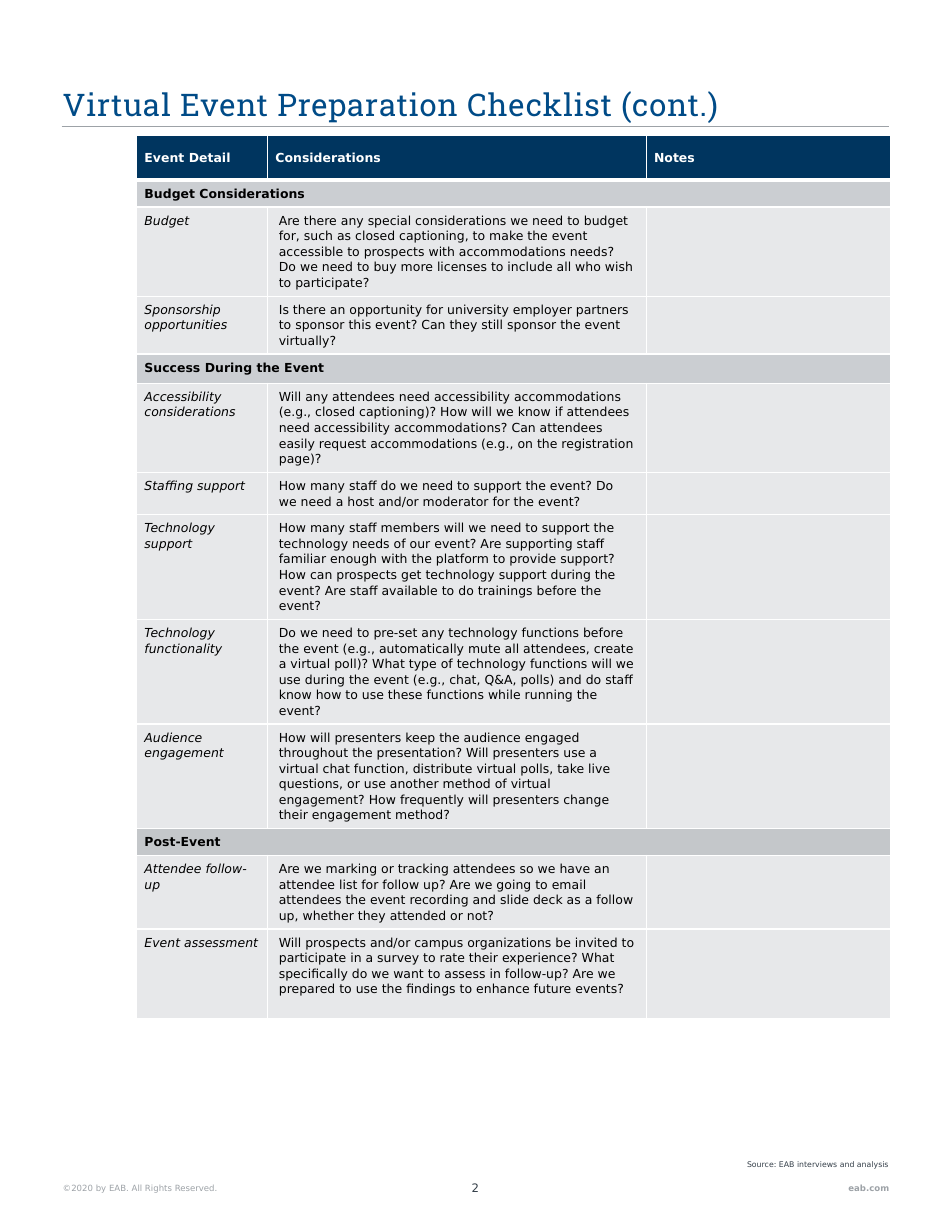
import pptx
import pptx.util
import pptx.oxml
import pptx.oxml.ns
from pptx.dml.color import RGBColor
from pptx.enum.shapes import MSO_CONNECTOR
from pptx.enum.text import MSO_ANCHOR, PP_ALIGN

Inches, Pt = pptx.util.Inches, pptx.util.Pt

# Colours and fonts
BLUE = RGBColor(0x00, 0x4B, 0x87)
NAVY = RGBColor(0x00, 0x35, 0x5F)
SECTION_GRAY = RGBColor(0xCB, 0xCE, 0xD2)
LAST_SECTION_GRAY = RGBColor(0xC4, 0xC7, 0xCA)
ROW_GRAY = RGBColor(0xE7, 0xE8, 0xEA)
RULE_GRAY = RGBColor(0x9D, 0xA2, 0xA7)
DARK = RGBColor(0x33, 0x3E, 0x48)
WHITE = RGBColor(0xFF, 0xFF, 0xFF)
BLACK = RGBColor(0, 0, 0)
BODY_FONT, TITLE_FONT = "DejaVu Sans", "Roboto Slab"

# Content
TITLE = "Virtual Event Preparation Checklist (cont.)"
HEADER = ("Event Detail", "Considerations", "Notes")
# Section name, fill, height, then its items: detail, considerations, height
SECTIONS = [
    ("Budget Considerations", SECTION_GRAY, 0.23, [
        ("Budget", "Are there any special considerations we need to budget for, such as closed "
         "captioning, to make the event accessible to prospects with accommodations needs? "
         "Do we need to buy more licenses to include all who wish to participate?", 0.58),
        ("Sponsorship opportunities", "Is there an opportunity for university employer partners "
         "to sponsor this event? Can they still sponsor the event virtually?", 0.47),
    ]),
    ("Success During the Event", SECTION_GRAY, 0.26, [
        ("Accessibility considerations", "Will any attendees need accessibility accommodations "
         "(e.g., closed captioning)? How will we know if attendees need accessibility "
         "accommodations? Can attendees easily request accommodations (e.g., on the "
         "registration page)?", 0.65),
        ("Staffing support", "How many staff do we need to support the event? Do we need a host "
         "and/or moderator for the event?", 0.3),
        ("Technology support", "How many staff members will we need to support the technology "
         "needs of our event? Are supporting staff familiar enough with the platform to provide "
         "support? How can prospects get technology support during the event? Are staff "
         "available to do trainings before the event?", 0.8),
        ("Technology functionality", "Do we need to pre-set any technology functions before the "
         "event (e.g., automatically mute all attendees, create a virtual poll)? What type of "
         "technology functions will we use during the event (e.g., chat, Q&A, polls) and do "
         "staff know how to use these functions while running the event?", 0.8),
        ("Audience engagement", "How will presenters keep the audience engaged throughout the "
         "presentation? Will presenters use a virtual chat function, distribute virtual polls, "
         "take live questions, or use another method of virtual engagement? How frequently will "
         "presenters change their engagement method?", 0.8),
    ]),
    ("Post-Event", LAST_SECTION_GRAY, 0.18, [
        ("Attendee follow-up", "Are we marking or tracking attendees so we have an attendee list "
         "for follow up? Are we going to email attendees the event recording and slide deck as a "
         "follow up, whether they attended or not?", 0.57),
        ("Event assessment", "Will prospects and/or campus organizations be invited to "
         "participate in a survey to rate their experience? What specifically do we want to "
         "assess in follow-up? Are we prepared to use the findings to enhance future events?", 0.8),
    ]),
]
# Text, position, size, colour, bold, alignment, anchor
FOOTERS = [
    ("Source: EAB interviews and analysis", (6.67, 10.36, 1.7, 0.08), 5, DARK, False,
     PP_ALIGN.LEFT, MSO_ANCHOR.BOTTOM),
    ("©2020 by EAB. All Rights Reserved.", (0.56, 10.56, 2.39, 0.09), 5.5, RULE_GRAY, False,
     PP_ALIGN.LEFT, MSO_ANCHOR.TOP),
    ("2", (4.02, 10.54, 0.45, 0.13), 7.5, DARK, False, PP_ALIGN.CENTER, MSO_ANCHOR.TOP),
    ("eab.com", (7.49, 10.51, 0.45, 0.19), 5.5, RULE_GRAY, True,
     PP_ALIGN.RIGHT, MSO_ANCHOR.MIDDLE),
]
COLUMN_WIDTHS = (1.17, 3.38, 2.18)
HEADER_HEIGHT = 0.4
TABLE_LEFT, TABLE_TOP = 1.22, 1.21


def set_font(para, name, size, color, bold=False, italic=False):
    font = para.font
    font.name, font.size, font.bold, font.italic = name, Pt(size), bold, italic
    font.color.rgb = color


def prepare_frame(frame, anchor):
    frame.margin_left = frame.margin_right = frame.margin_top = frame.margin_bottom = 0
    frame.word_wrap = True
    frame.vertical_anchor = anchor


def set_borders(cell, top=1, bottom=1):
    properties = cell._tc.get_or_add_tcPr()
    for side, width in (("L", 1), ("R", 1), ("T", top), ("B", bottom)):
        properties.append(pptx.oxml.parse_xml(
            f'<a:ln{side} {pptx.oxml.ns.nsdecls("a")} w="{Pt(width)}"><a:solidFill>'
            f'<a:srgbClr val="{WHITE}"/></a:solidFill></a:ln{side}>'))


def fill_cell(cell, text, fill, color=BLACK, bold=False, italic=False, inset=0.07,
              anchor=MSO_ANCHOR.TOP, top=1, bottom=1):
    set_borders(cell, top, bottom)
    cell.fill.solid()
    cell.fill.fore_color.rgb = fill
    cell.margin_left = cell.margin_right = Inches(inset)
    cell.margin_top = cell.margin_bottom = Inches(0.05)
    cell.vertical_anchor = anchor
    para = cell.text_frame.paragraphs[0]
    if text:
        para.text = text
    para.line_spacing = 1.07
    para.space_after = Pt(8)
    set_font(para, BODY_FONT, 8, color, bold, italic)
    if not text:  # keeps an empty cell from stretching its row
        para._p.append(pptx.oxml.parse_xml(
            f'<a:endParaRPr {pptx.oxml.ns.nsdecls("a")} sz="800"/>'))


deck = pptx.Presentation()
deck.slide_width, deck.slide_height = Inches(8.5), Inches(11)
page = deck.slides.add_slide(deck.slide_layouts[5])

# Title
title = page.shapes.title
title.left, title.top, title.width, title.height = map(Inches, (0.56, 0.8, 7.39, 0.3))
prepare_frame(title.text_frame, MSO_ANCHOR.BOTTOM)
para = title.text_frame.paragraphs[0]
para.text = TITLE
para.alignment = PP_ALIGN.LEFT
para.line_spacing = 0.9
set_font(para, TITLE_FONT, 20, BLUE)
para.runs[0].font._element.set("spc", "50")

# Rule below the title
rule = page.shapes.add_connector(MSO_CONNECTOR.STRAIGHT, Inches(0.55), Inches(1.13),
                                 Inches(7.94), Inches(1.13))
rule.line.color.rgb = RULE_GRAY
rule.line.width = Pt(1)
rule._element.spPr.append(pptx.oxml.parse_xml(
    f'<a:effectLst {pptx.oxml.ns.nsdecls("a")}/>'))

# Checklist table
heights = [HEADER_HEIGHT]
for _, _, section_height, items in SECTIONS:
    heights += [section_height] + [height for _, _, height in items]
table = page.shapes.add_table(
    len(heights), len(COLUMN_WIDTHS), Inches(TABLE_LEFT), Inches(TABLE_TOP),
    Inches(sum(COLUMN_WIDTHS)), Inches(sum(heights))).table
table.horz_banding = False
for column, width in zip(table.columns, COLUMN_WIDTHS):
    column.width = Inches(width)
for row, height in zip(table.rows, heights):
    row.height = Inches(height)

for column, label in enumerate(HEADER):
    fill_cell(table.cell(0, column), label, NAVY, WHITE, bold=True,
              anchor=MSO_ANCHOR.MIDDLE, bottom=3)
row = 1
for name, fill, _, items in SECTIONS:
    table.cell(row, 0).merge(table.cell(row, len(COLUMN_WIDTHS) - 1))
    for column in range(len(COLUMN_WIDTHS)):
        fill_cell(table.cell(row, column), "" if column else name, fill, bold=True,
                  top=3 if row == 1 else 1)
    for row, (detail, considerations, _) in enumerate(items, row + 1):
        fill_cell(table.cell(row, 0), detail, ROW_GRAY, italic=True)
        fill_cell(table.cell(row, 1), considerations, ROW_GRAY, inset=0.1)
        fill_cell(table.cell(row, 2), "", ROW_GRAY, inset=0.1)
    row += 1

# Source and footer
for text, position, size, color, bold, alignment, anchor in FOOTERS:
    box = page.shapes.add_textbox(*map(Inches, position))
    prepare_frame(box.text_frame, anchor)
    para = box.text_frame.paragraphs[0]
    para.text = text
    para.alignment = alignment
    set_font(para, BODY_FONT, size, color, bold)

deck.save("out.pptx")
